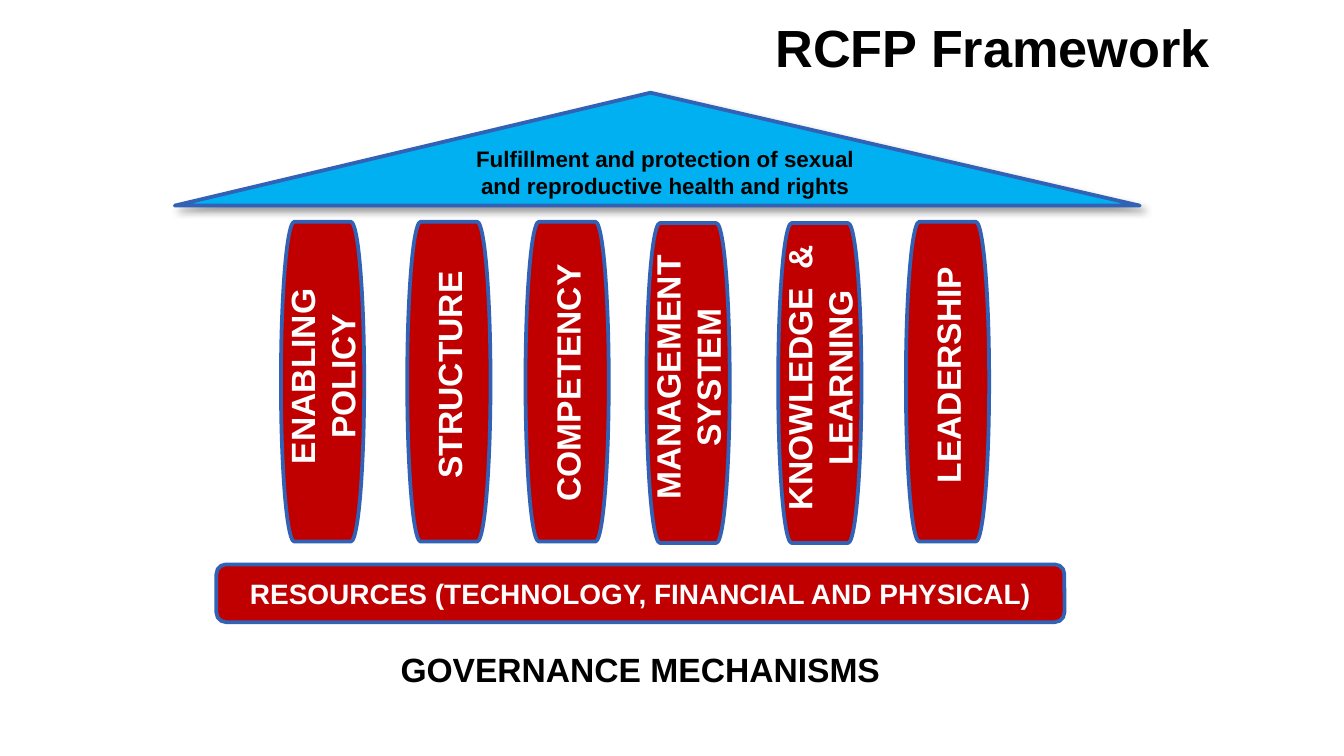
from lxml import etree
from pptx import Presentation
from pptx.dml.color import RGBColor
from pptx.enum.shapes import MSO_SHAPE as KIND
from pptx.enum.text import MSO_ANCHOR, MSO_AUTO_SIZE, PP_ALIGN
from pptx.util import Inches, Pt

BLACK = RGBColor(0x00, 0x00, 0x00)
WHITE = RGBColor(0xFF, 0xFF, 0xFF)
SKY = RGBColor(0x00, 0xB0, 0xF0)
RED = RGBColor(0xC0, 0x00, 0x00)
BLUE = RGBColor(0x31, 0x62, 0xB5)

TITLE = "RCFP Framework"
GOAL = "Fulfillment and protection of sexual and reproductive health and rights"
BASE = "RESOURCES (TECHNOLOGY, FINANCIAL AND PHYSICAL)"
GROUND = "GOVERNANCE MECHANISMS"
# label, pillar left, pillar top, label length, label depth, label middle
PILLARS = [
    ("ENABLING POLICY", 2.09, 1.65, 2.24, 0.71, 2.8),
    ("STRUCTURE", 3.03, 1.65, 2.24, 0.4, 2.79),
    ("COMPETENCY", 3.91, 1.65, 2.35, 0.4, 2.85),
    ("MANAGEMENT SYSTEM", 4.81, 1.66, 2.24, 0.71, 2.81),
    ("KNOWLEDGE  & LEARNING", 5.79, 1.66, 2.24, 0.71, 2.81),
    ("LEADERSHIP", 6.74, 1.65, 2.24, 0.4, 2.79),
]
WIDE, TALL = 0.62, 2.38
ROOF = (1.3, 0.69, 7.18, 0.84)
PEAK = 3.54  # from the left end of the roof
NS = "http://schemas.openxmlformats.org/drawingml/2006/main"


def write(shape, words, size, color, align=PP_ALIGN.CENTER, anchor=MSO_ANCHOR.TOP):
    frame = shape.text_frame
    frame.text = words
    frame.word_wrap = True
    frame.auto_size = MSO_AUTO_SIZE.NONE
    frame.vertical_anchor = anchor
    para = frame.paragraphs[0]
    para.alignment = align
    font = para.font
    font.name, font.size, font.bold = "Arial", Pt(size), True
    font.color.rgb = color


def block(home, kind, box, fill):
    shape = home.add_shape(kind, *map(Inches, box))
    shape.shadow.inherit = False
    shape.fill.solid()
    shape.fill.fore_color.rgb = fill
    shape.line.color.rgb = BLUE
    shape.line.width = Pt(2)
    return shape


def label(home, words, box, size, color):
    shape = home.add_textbox(*map(Inches, box))
    write(shape, words, size, color)
    return shape


def shade(shape):
    """Add a soft black shadow to the lower right."""
    effects = shape._element.spPr.find(f"{{{NS}}}effectLst")
    effects.append(etree.fromstring(
        f'<a:outerShdw xmlns:a="{NS}" blurRad="{Pt(4)}" dist="{Pt(3)}" '
        'dir="2700000" algn="tl" rotWithShape="0"><a:srgbClr val="000000">'
        '<a:alpha val="40000"/></a:srgbClr></a:outerShdw>'))


def main():
    deck = Presentation()
    deck.slide_width = Inches(10)
    deck.slide_height = deck.slide_width * 9 // 16
    slide = deck.slides.add_slide(deck.slide_layouts[5])
    shapes = slide.shapes

    title = shapes.title
    title.left, title.top = Inches(4.69), Inches(0.06)
    title.width, title.height = Inches(4.41), Inches(0.57)
    write(title, TITLE, 28, BLACK, PP_ALIGN.RIGHT)

    label(shapes, GROUND, (1.61, 4.78, 6.31, 0.4), 18, BLACK)
    roof = block(shapes, KIND.ISOSCELES_TRIANGLE, ROOF, SKY)
    roof.adjustments[0] = PEAK / ROOF[2]
    shade(roof)

    for words, left, top, long, deep, mid in PILLARS:
        group = shapes.add_group_shape().shapes
        block(group, KIND.FLOWCHART_TERMINATOR, (left, top, WIDE, TALL), RED)
        box = (left + WIDE / 2 - long / 2, mid - deep / 2, long, deep)
        label(group, words, box, 18, WHITE).rotation = 270

    base = block(shapes, KIND.ROUNDED_RECTANGLE, (1.61, 4.2, 6.31, 0.43), RED)
    write(base, BASE, 15, WHITE, anchor=MSO_ANCHOR.MIDDLE)
    label(shapes, GOAL, (3.42, 1.03, 3.06, 0.5), 12, BLACK)

    deck.save("out.pptx")


if __name__ == "__main__":
    main()
